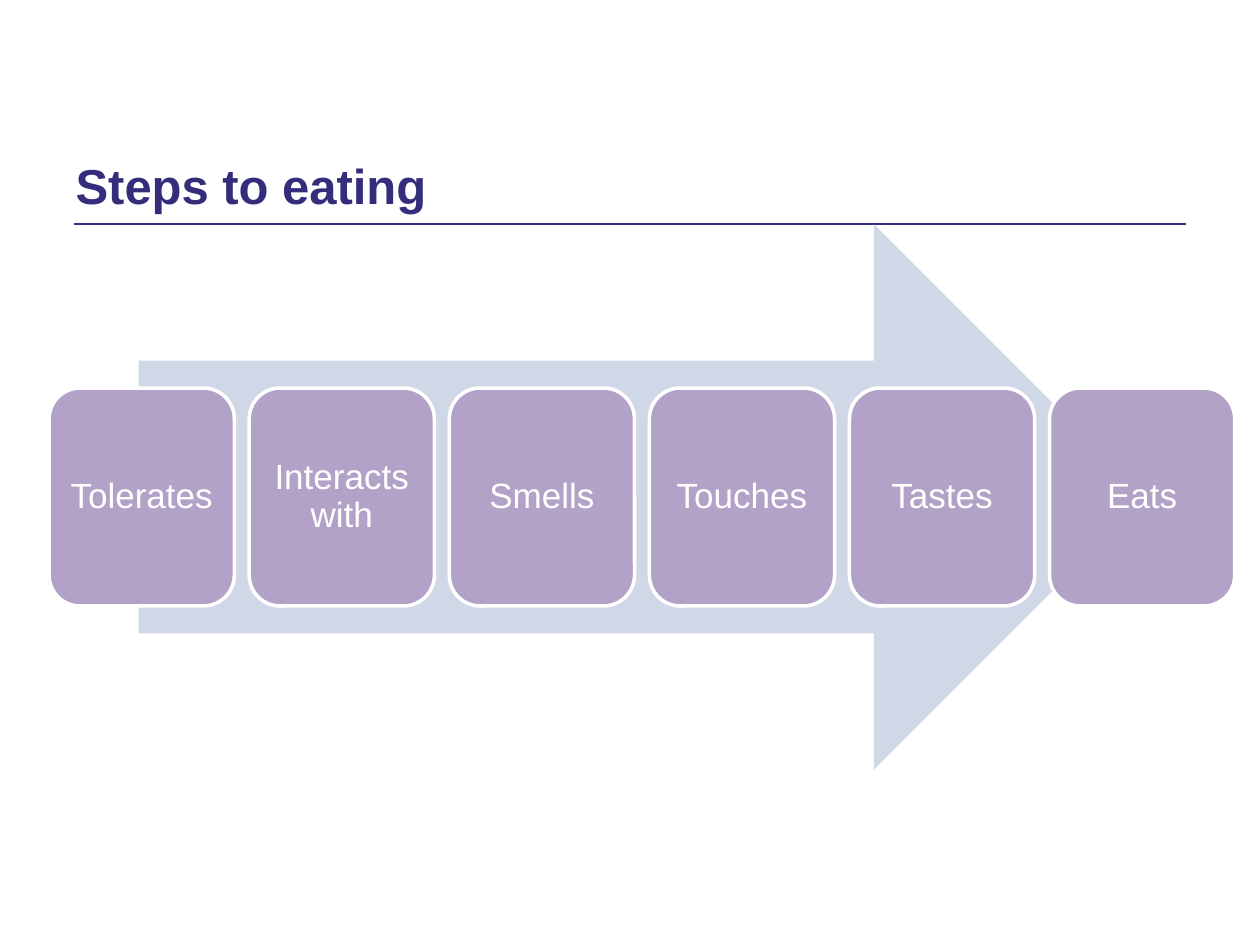
from dataclasses import dataclass

from lxml.etree import SubElement
from pptx import Presentation
from pptx.dml.color import RGBColor
from pptx.enum.shapes import MSO_CONNECTOR, MSO_SHAPE
from pptx.enum.text import MSO_ANCHOR, PP_ALIGN
from pptx.oxml.ns import qn
from pptx.util import Inches, Pt


@dataclass(frozen=True)
class Theme:
    font: str = "Arial"
    heading: RGBColor = RGBColor(0x33, 0x2D, 0x7C)
    arrow: RGBColor = RGBColor(0xD0, 0xD8, 0xE8)
    card: RGBColor = RGBColor(0xB3, 0xA2, 0xC7)
    light: RGBColor = RGBColor(0xFF, 0xFF, 0xFF)
    title_size: Pt = Pt(28)
    step_size: Pt = Pt(20)
    rule_width: Pt = Pt(1)
    card_outline: Pt = Pt(2)


THEME = Theme()
STEPS = ["Tolerates", "Interacts with", "Smells", "Touches", "Tastes", "Eats"]


def format_text(para, size, color, bold=False):
    for span in para.runs:
        span.font.name = THEME.font
        span.font.size = size
        span.font.color.rgb = color
        span.font.bold = bold


def add_heading(page, text, left, top, width, height):
    """Place the title with a rule, slightly inset, along its lower edge."""
    title = page.shapes.title
    title.left, title.top, title.width, title.height = left, top, width, height
    frame = title.text_frame
    frame.text = text
    frame.word_wrap = True
    frame.vertical_anchor = MSO_ANCHOR.MIDDLE
    frame.paragraphs[0].alignment = PP_ALIGN.LEFT
    format_text(frame.paragraphs[0], THEME.title_size, THEME.heading, bold=True)

    inset, bottom = Inches(0.09), top + height
    rule = page.shapes.add_connector(
        MSO_CONNECTOR.STRAIGHT, left + inset, bottom, left + width - inset, bottom)
    rule.line.color.rgb = THEME.heading
    rule.line.width = THEME.rule_width
    SubElement(rule._element.spPr, qn("a:effectLst"))


def add_step(group, text, left, top, width, height):
    card = group.shapes.add_shape(
        MSO_SHAPE.ROUNDED_RECTANGLE, left, top, width, height)
    card.shadow.inherit = False
    card.fill.solid()
    card.fill.fore_color.rgb = THEME.card
    card.line.color.rgb = THEME.light
    card.line.width = THEME.card_outline

    frame = card.text_frame
    frame.text = text
    frame.word_wrap = True
    frame.vertical_anchor = MSO_ANCHOR.MIDDLE
    frame.margin_left = frame.margin_right = Inches(0.08)
    frame.margin_top = frame.margin_bottom = Inches(0.08)
    para = frame.paragraphs[0]
    para.alignment = PP_ALIGN.CENTER
    para.line_spacing = 0.9
    format_text(para, THEME.step_size, THEME.light)


def add_process(page, steps, left, top, width, height):
    """Lay a row of equal cards across a wide arrow."""
    group = page.shapes.add_group_shape()
    arrow = group.shapes.add_shape(
        MSO_SHAPE.RIGHT_ARROW, left + Inches(0.71), top, Inches(8), height)
    arrow.shadow.inherit = False
    arrow.fill.solid()
    arrow.fill.fore_color.rgb = THEME.arrow
    arrow.line.fill.background()

    card_width, card_height = Inches(1.47), Inches(1.73)
    pitch = (width - card_width) / (len(steps) - 1)
    card_top = top + (height - card_height) // 2
    for index, step in enumerate(steps):
        add_step(group, step, left + round(index * pitch), card_top,
                 card_width, card_height)


def main():
    deck = Presentation()
    deck.slide_width, deck.slide_height = Inches(10), Inches(7.5)
    page = deck.slides.add_slide(deck.slide_layouts[5])
    add_heading(page, "Steps to eating",
                Inches(0.5), Inches(1.15), Inches(9), Inches(0.63))
    add_process(page, STEPS,
                Inches(0.39), Inches(1.78), Inches(9.41), Inches(4.33))
    deck.save("out.pptx")


if __name__ == "__main__":
    main()
